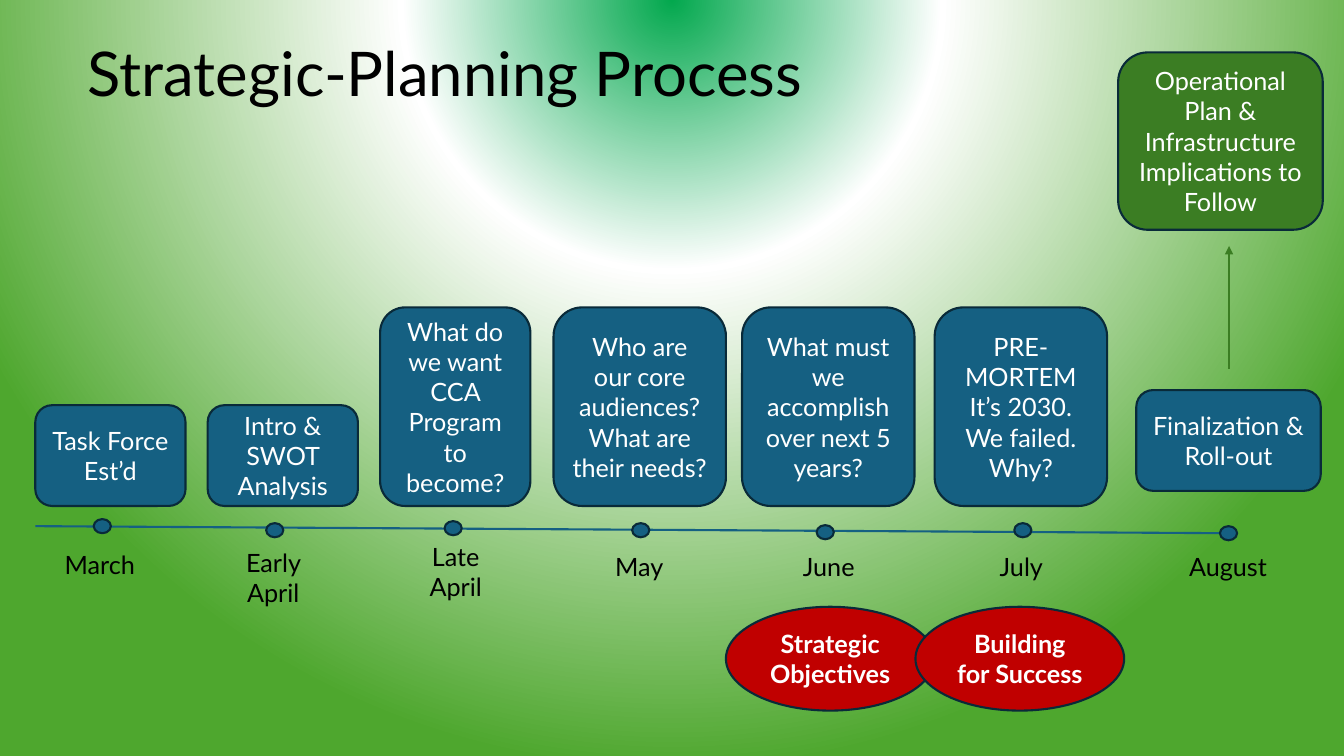
from dataclasses import dataclass

from lxml import etree
from pptx import Presentation
from pptx.dml.color import RGBColor
from pptx.enum.shapes import MSO_CONNECTOR, MSO_SHAPE
from pptx.enum.text import MSO_ANCHOR, PP_ALIGN
from pptx.oxml import parse_xml
from pptx.oxml.ns import nsdecls, qn
from pptx.util import Inches, Pt

ROUND, OVAL = MSO_SHAPE.ROUNDED_RECTANGLE, MSO_SHAPE.OVAL
STRAIGHT = MSO_CONNECTOR.STRAIGHT
CENTER, LEFT = PP_ALIGN.CENTER, PP_ALIGN.LEFT
MIDDLE, TOP = MSO_ANCHOR.MIDDLE, MSO_ANCHOR.TOP


@dataclass(frozen=True)
class Theme:
    font: str = "Lato"
    title: int = 44
    body: int = 18
    line: float = 1.5
    black: str = "000000"
    white: str = "FFFFFF"
    blue: str = "156082"
    outline: str = "092A39"
    green: str = "3B7D23"
    red: str = "C00000"
    backdrop: tuple = ((0, "03A84E"), (35, "FFFFFF"), (100, "4EA72E"))


THEME = Theme()
TITLE = "Strategic-Planning Process"

# month, label left, label top, dot left, dot top, step paragraphs, step left, width, height
MILESTONES = [
    ("March", 0.42, 5.40, 0.93, 5.15, ["Task Force Est’d"], 0.35, 1.49, 1.0),
    ("Early April", 2.14, 5.38, 2.64, 5.19, ["Intro & SWOT Analysis"], 2.06, 1.49, 1.0),
    ("Late April", 3.95, 5.32, 4.41, 5.17,
     ["What do we want CCA Program to become?"], 3.77, 1.49, 1.97),
    ("May", 5.77, 5.42, 6.27, 5.19,
     ["Who are our core audiences? What are their needs?"], 5.49, 1.71, 1.97),
    ("June", 7.65, 5.42, 8.10, 5.21,
     ["What must we accomplish over next 5 years?"], 7.36, 1.71, 1.97),
    ("July", 9.56, 5.42, 10.06, 5.19,
     ["PRE-MORTEM", "It’s 2030. We failed. Why?"], 9.27, 1.71, 1.97),
    ("August", 11.61, 5.42, 12.10, 5.22, ["Finalization & Roll-out"], 11.27, 1.83, 1.0),
]
STEP_BOTTOM, LAST_STEP_BOTTOM = 5.02, 4.87
LABEL_W, LINE_H = 1.14, 0.4
DOT_W, DOT_H = 0.17, 0.14

FOLLOW_UP = "Operational Plan & Infrastructure Implications to Follow"
GOALS = [("Strategic Objectives", 7.20), ("Building for Success", 9.08)]
# start, end, colour
ARROWS = [
    ((0.35, 5.22), (12.19, 5.29), THEME.blue),
    ((12.19, 3.66), (12.19, 2.44), THEME.green),
]


def paint_background(slide):
    stops = "".join(
        f'<a:gs pos="{pos * 1000}"><a:srgbClr val="{color}"/></a:gs>'
        for pos, color in THEME.backdrop)
    slide.background.fill.gradient()
    grad = slide.element.find(".//" + qn("a:gradFill"))
    grad.getparent().replace(grad, parse_xml(
        f'<a:gradFill {nsdecls("a")} rotWithShape="1"><a:gsLst>{stops}</a:gsLst>'
        '<a:path path="circle"><a:fillToRect l="50000" t="-80000" r="50000" b="180000"/>'
        '</a:path></a:gradFill>'))


def write(sp, paragraphs, color, size=THEME.body, bold=False, align=CENTER, anchor=MIDDLE):
    tf = sp.text_frame
    tf.word_wrap = True
    tf.vertical_anchor = anchor
    tf.text = "\n".join(paragraphs)
    for p in tf.paragraphs:
        p.alignment = align
        p.font.name, p.font.size, p.font.bold = THEME.font, Pt(size), bold
        p.font.color.rgb = RGBColor.from_string(color)


def add_text(slide, box, text, **style):
    sp = slide.shapes.add_textbox(*map(Inches, box))
    write(sp, [text], THEME.black, **style)
    return sp


def add_block(slide, kind, box, fill, paragraphs=(), bold=False):
    sp = slide.shapes.add_shape(kind, *map(Inches, box))
    sp.shadow.inherit = False
    sp.fill.solid()
    sp.fill.fore_color.rgb = RGBColor.from_string(fill)
    sp.line.color.rgb = RGBColor.from_string(THEME.outline)
    sp.line.width = Pt(THEME.line)
    if paragraphs:
        write(sp, paragraphs, THEME.white, bold=bold)


def add_arrow(slide, start, end, color):
    sp = slide.shapes.add_connector(STRAIGHT, *map(Inches, start + end))
    sp.line.color.rgb = RGBColor.from_string(color)
    sp.line.width = Pt(THEME.line)
    etree.SubElement(sp.line._get_or_add_ln(), qn("a:tailEnd"), type="triangle")
    etree.SubElement(sp._element.spPr, qn("a:effectLst"))


def main():
    prs = Presentation()
    prs.slide_width, prs.slide_height = Inches(13.33), Inches(7.5)
    slide = prs.slides.add_slide(prs.slide_layouts[6])
    paint_background(slide)

    title = add_text(slide, (0.77, 0.03, 11.5, 1.45), TITLE,
                     size=THEME.title, align=LEFT, anchor=MIDDLE)
    title.text_frame.paragraphs[0].line_spacing = 0.9

    for arrow in ARROWS:
        add_arrow(slide, *arrow)

    for month, label_x, label_y, dot_x, dot_y, step, x, w, h in MILESTONES:
        bottom = LAST_STEP_BOTTOM if month == "August" else STEP_BOTTOM
        add_block(slide, ROUND, (x, bottom - h, w, h), THEME.blue, step)
        add_block(slide, OVAL, (dot_x, dot_y, DOT_W, DOT_H), THEME.blue)
        label_h = 0.71 if " " in month else LINE_H
        add_text(slide, (label_x, label_y, LABEL_W, label_h), month, anchor=TOP)

    add_block(slide, ROUND, (11.09, 0.52, 2.03, 1.76), THEME.green, [FOLLOW_UP])
    for goal, x in GOALS:
        add_block(slide, OVAL, (x, 6.02, 2.07, 1.03), THEME.red, [goal], bold=True)

    prs.save("out.pptx")


if __name__ == "__main__":
    main()
